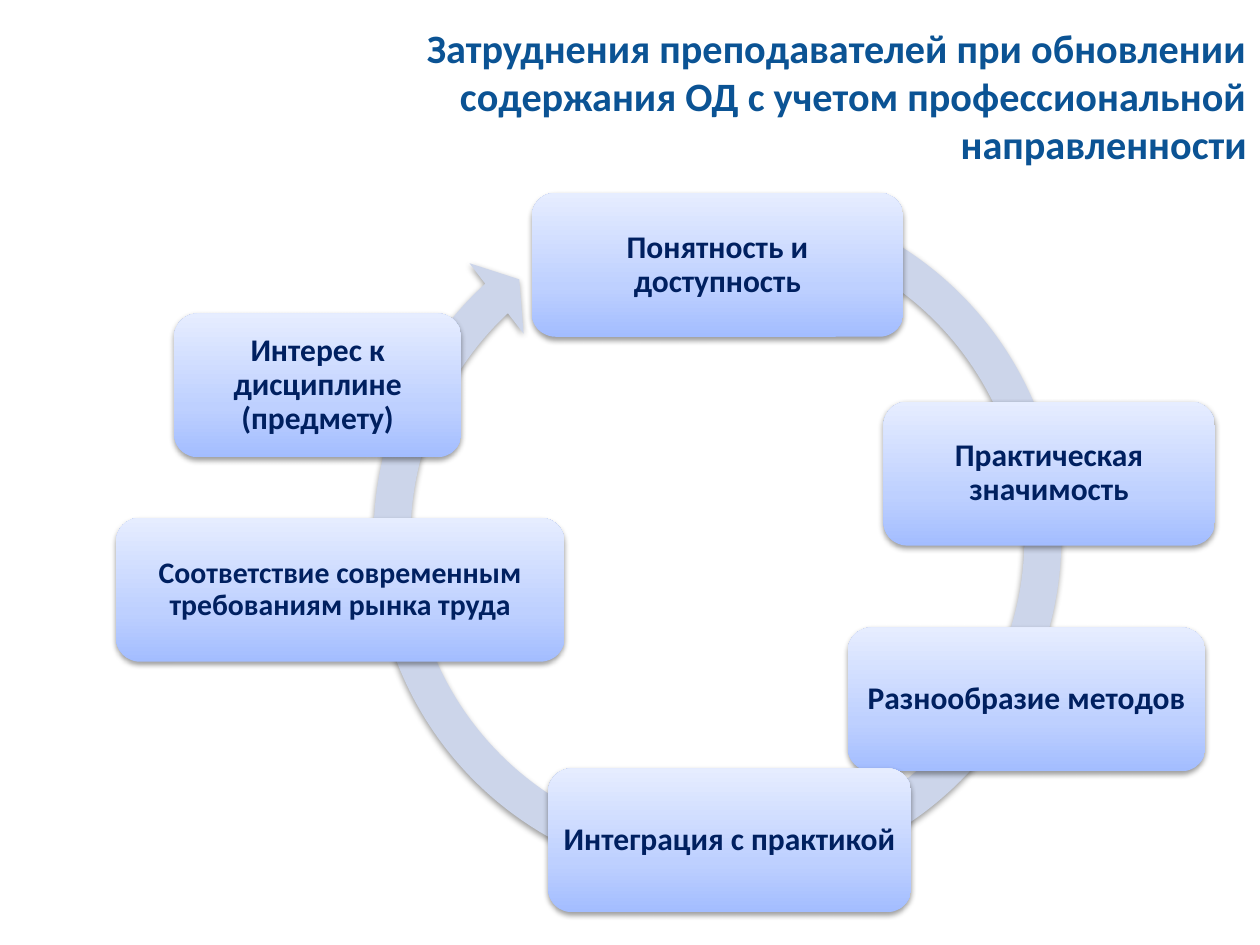
"""Build a slide with a cycle of difficulties teachers face when updating course content."""
from copy import deepcopy

from pptx import Presentation
from pptx.dml.color import RGBColor
from pptx.enum.shapes import MSO_SHAPE as Preset
from pptx.enum.text import MSO_ANCHOR as Anchor, PP_ALIGN as Align
from pptx.oxml import parse_xml
from pptx.oxml.ns import nsdecls, qn
from pptx.util import Cm, Pt

COLORS = {"title": "0B5394", "label": "002060", "ring": "CCD5EA"}
GRADIENT = {0: "A3BDFF", 0.35: "BED0FF", 1: "E6EDFF"}
BOX_HEIGHT = 2.9
FRAME = {
    "word_wrap": True,
    "vertical_anchor": Anchor.MIDDLE,
    "margin_left": Cm(0.04),
    "margin_right": Cm(0.04),
    "margin_top": Cm(0.04),
    "margin_bottom": Cm(0.04),
}
DIFFICULTIES = [
    ("Понятность и доступность", 10.72, 3.89, 7.49, 18),
    ("Практическая значимость", 17.81, 8.1, 6.68, 18),
    ("Разнообразие методов", 17.09, 12.65, 7.21, 18),
    ("Интеграция с практикой", 11.05, 15.49, 7.32, 18),
    ("Соответствие современным требованиям рынка труда", 2.34, 10.44, 9.04, 17),
    ("Интерес к дисциплине (предмету)", 3.51, 6.32, 5.79, 18),
]


def write(paragraph, text, align, size, color):
    paragraph.text = text
    paragraph.alignment = align
    font = paragraph.runs[0].font
    for name, value in {"name": "Calibri", "size": Pt(size), "bold": True}.items():
        setattr(font, name, value)
    font.color.rgb = RGBColor.from_string(COLORS[color])


def add_soft_shape(preset, left, top, width, height):
    shape = slide.shapes.add_shape(preset, Cm(left), Cm(top), Cm(width), Cm(height))
    shape.line.fill.background()
    shape.shadow.inherit = False
    shape.element.spPr.find(qn("a:effectLst")).append(parse_xml(
        f'<a:outerShdw {nsdecls("a")} blurRad="40000" dist="20000" dir="5400000" rotWithShape="0">'
        '<a:srgbClr val="000000"><a:alpha val="38000"/></a:srgbClr></a:outerShdw>'))
    return shape


deck = Presentation()
deck.slide_width, deck.slide_height = Cm(25.4), Cm(19.05)
slide = deck.slides.add_slide(deck.slide_layouts[5])

heading = slide.shapes.title
heading.left, heading.top, heading.width, heading.height = Cm(5.89), Cm(0), Cm(19.51), Cm(3.84)
heading.text_frame.vertical_anchor = Anchor.MIDDLE
write(heading.text_frame.paragraphs[0],
      "Затруднения преподавателей при обновлении содержания ОД "
      "с учетом профессиональной направленности",
      Align.RIGHT, 23, "title")

ring = add_soft_shape(Preset.CIRCULAR_ARROW, 7.01, 3.38, 14.91, 14.91)
ring.fill.solid()
ring.fill.fore_color.rgb = RGBColor.from_string(COLORS["ring"])
for index, value in enumerate([0.05, 3.13, 136.35, 174.84, 0.06]):
    ring.adjustments[index] = value

for text, left, top, width, size in DIFFICULTIES:
    difficulty = add_soft_shape(Preset.ROUNDED_RECTANGLE, left, top, width, BOX_HEIGHT)
    difficulty.fill.gradient()
    difficulty.fill.gradient_angle = 90
    stops = difficulty.element.spPr.find(".//" + qn("a:gsLst"))
    stops.append(deepcopy(stops[0]))
    for stop, (position, color) in zip(difficulty.fill.gradient_stops, GRADIENT.items()):
        stop.position = position
        stop.color.rgb = RGBColor.from_string(color)
    frame = difficulty.text_frame
    for name, value in FRAME.items():
        setattr(frame, name, value)
    label = frame.paragraphs[0]
    write(label, text, Align.CENTER, size, "label")
    label.line_spacing = 0.9

deck.save("out.pptx")
